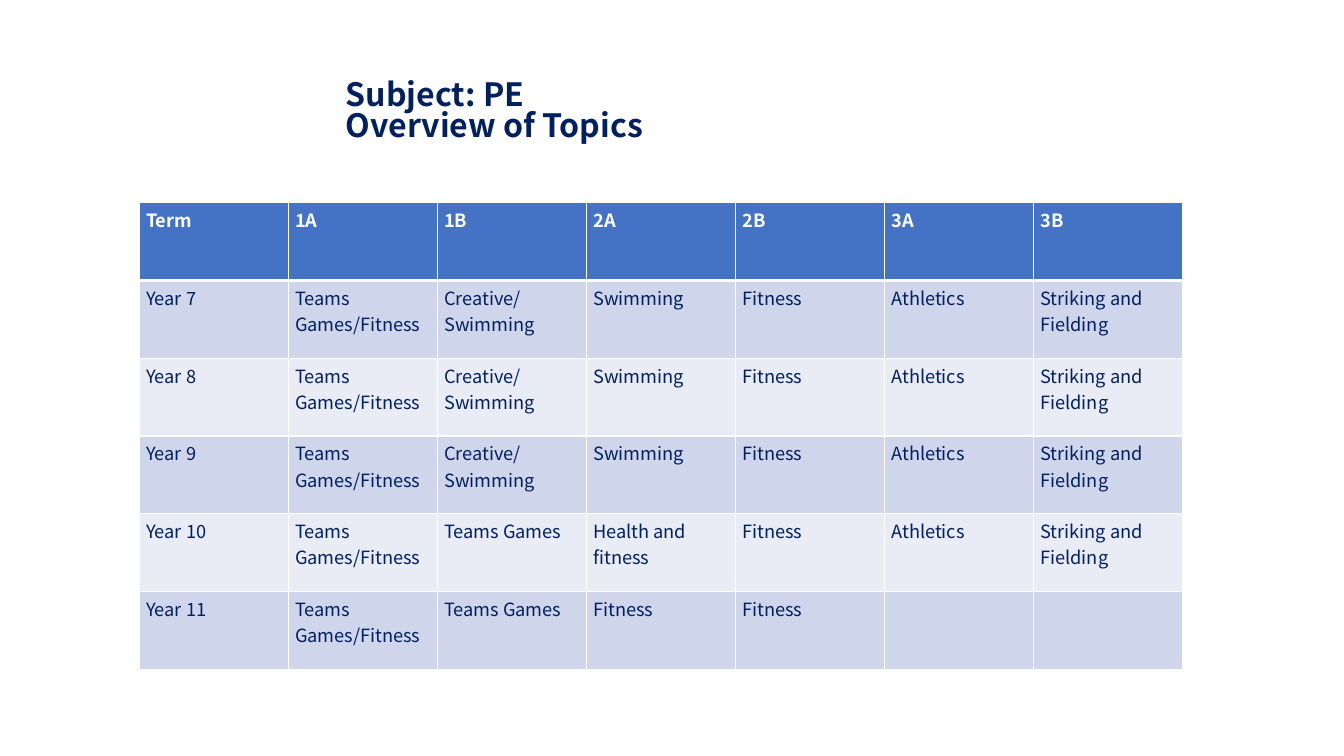
from dataclasses import dataclass

from lxml import etree
from pptx import Presentation
from pptx import util as u
from pptx.dml.color import RGBColor
from pptx.enum import text
from pptx.oxml import ns


@dataclass(frozen=True)
class Theme:
    font: str = "Noto Sans CJK KR"
    navy: str = "002060"
    white: str = "FFFFFF"
    header: str = "4472C4"
    bands: tuple = ("CFD5EA", "E9EBF5")
    title_size: float = 22.9
    cell_size: float = 13
    thin: float = 1
    thick: float = 3


THEME = Theme()
TITLE = "Subject: PE\nOverview of Topics"
TERMS = ["Term", "1A", "1B", "2A", "2B", "3A", "3B"]
TEAMS = "Teams Games/Fitness"
SUMMER = ["Fitness", "Athletics", "Striking and Fielding"]
LOWER_SCHOOL = [TEAMS, "Creative/ Swimming", "Swimming", *SUMMER]
TOPICS = [
    TERMS,
    *[[f"Year {year}", *LOWER_SCHOOL] for year in (7, 8, 9)],
    ["Year 10", TEAMS, "Teams Games", "Health and fitness", *SUMMER],
    ["Year 11", TEAMS, "Teams Games", "Fitness", "Fitness", "", ""],
]


def format_runs(text_frame, size, color, bold):
    for paragraph in text_frame.paragraphs:
        for run in paragraph.runs:
            run.font.name = THEME.font
            run.font.size = u.Pt(size)
            run.font.bold = bold
            run.font.color.rgb = RGBColor.from_string(color)


def add_title(slide):
    box = slide.shapes.add_textbox(
        u.Inches(3.33), u.Inches(0.68), u.Inches(7.06), u.Inches(0.87))
    frame = box.text_frame
    frame.word_wrap = True
    frame.vertical_anchor = text.MSO_ANCHOR.MIDDLE
    frame.text = TITLE
    for paragraph in frame.paragraphs:
        paragraph.line_spacing = 0.82
    format_runs(frame, THEME.title_size, THEME.navy, True)


def set_borders(cell, top, bottom):
    properties = cell._tc.get_or_add_tcPr()
    widths = {"L": THEME.thin, "R": THEME.thin, "T": top, "B": bottom}
    for side, width in widths.items():
        line = etree.SubElement(properties, ns.qn(f"a:ln{side}"), w=str(u.Pt(width)))
        fill = etree.SubElement(line, ns.qn("a:solidFill"))
        etree.SubElement(fill, ns.qn("a:srgbClr"), val=THEME.white)


def format_cell(cell, topic, row):
    is_header = row == 0
    set_borders(cell,
                THEME.thick if row == 1 else THEME.thin,
                THEME.thick if is_header else THEME.thin)
    cell.fill.solid()
    color = THEME.header if is_header else THEME.bands[(row - 1) % 2]
    cell.fill.fore_color.rgb = RGBColor.from_string(color)
    cell.margin_left = cell.margin_right = u.Inches(0.07)
    cell.margin_top = cell.margin_bottom = u.Inches(0.04)
    cell.text_frame.text = topic
    format_runs(cell.text_frame, THEME.cell_size,
                THEME.white if is_header else THEME.navy, is_header)


def add_topics_table(slide):
    frame = slide.shapes.add_table(
        len(TOPICS), len(TERMS),
        u.Inches(1.38), u.Inches(2.01), u.Inches(10.35), u.Inches(4.63))
    for row, topics in enumerate(TOPICS):
        for column, topic in enumerate(topics):
            format_cell(frame.table.cell(row, column), topic, row)


def main():
    presentation = Presentation()
    presentation.slide_width = u.Inches(13.33)
    presentation.slide_height = u.Inches(7.5)
    slide = presentation.slides.add_slide(presentation.slide_layouts[6])
    add_title(slide)
    add_topics_table(slide)
    presentation.save("out.pptx")


if __name__ == "__main__":
    main()
